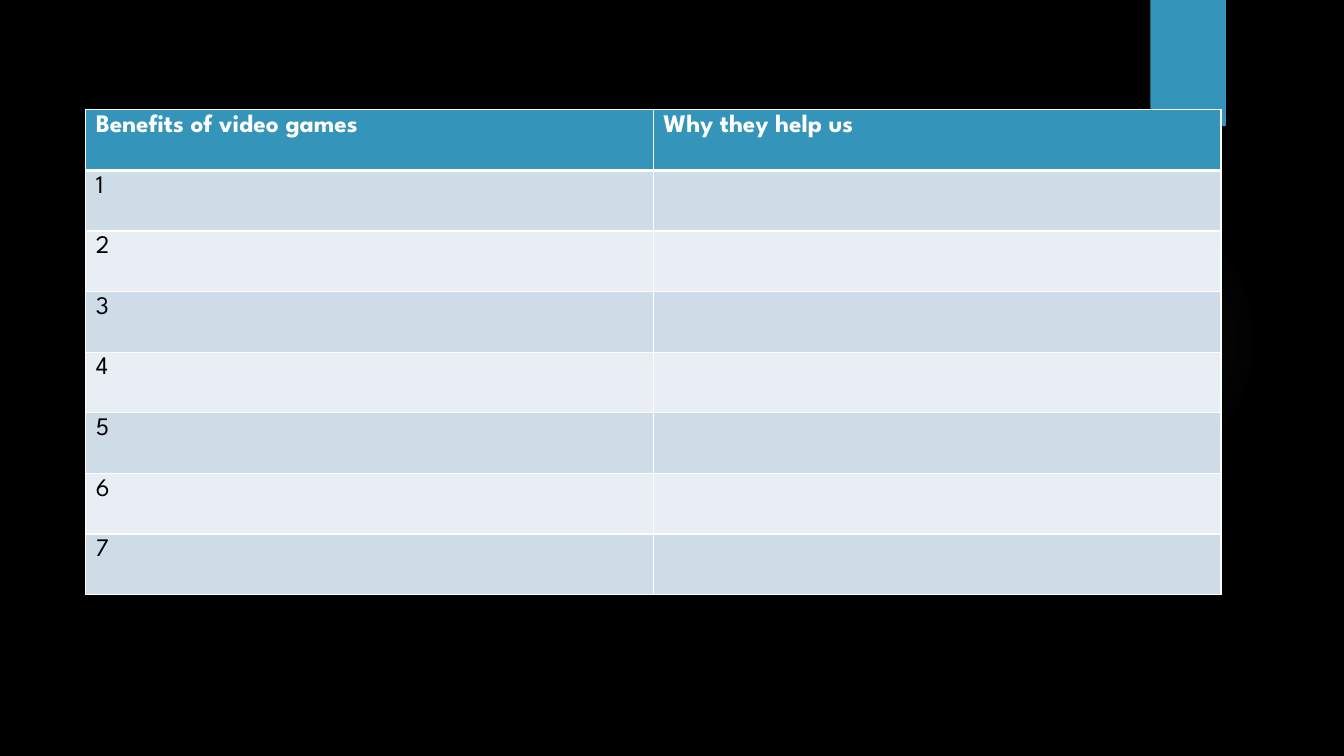
from dataclasses import dataclass

from pptx import Presentation
from pptx.dml.color import RGBColor
from pptx.enum.shapes import MSO_SHAPE
from pptx.oxml import parse_xml
from pptx.oxml.ns import nsdecls, qn
from pptx.util import Inches, Pt

HEADERS = ("Benefits of video games", "Why they help us")
BENEFITS = [(str(number), "") for number in range(1, 8)]
ROWS = [HEADERS, *BENEFITS]

TABLE_LEFT, TABLE_TOP = 0.85, 1.09
COLUMN_WIDTH, TABLE_HEIGHT = 5.63, 4.81
GLOW_STOPS = ((0, 7), (36, 6), (69, 0))


@dataclass(frozen=True)
class Theme:
    background: str = "000000"
    accent: str = "3494BA"
    glow: str = "AAA7BC"
    bands: tuple = ("CEDCE7", "E8EEF3")
    border: str = "FFFFFF"
    header_text: str = "FFFFFF"
    body_text: str = "000000"
    font: str = "League Spartan"
    text_size: int = 18
    border_width: int = 1
    header_rule: int = 3


THEME = Theme()


def paint(fill, color):
    fill.solid()
    fill.fore_color.rgb = RGBColor.from_string(color)


def add_plain_shape(slide, kind, left, top, width, height):
    shape = slide.shapes.add_shape(kind, Inches(left), Inches(top), Inches(width), Inches(height))
    shape.shadow.inherit = False
    shape.line.fill.background()
    return shape


def add_glow(slide):
    glow = add_plain_shape(slide, MSO_SHAPE.OVAL, 9.41, 1.83, 3.08, 3.08)
    glow.fill.background()
    stops = "".join(
        f'<a:gs pos="{position * 1000}"><a:srgbClr val="{THEME.glow}">'
        f'<a:alpha val="{opacity * 1000}"/></a:srgbClr></a:gs>'
        for position, opacity in GLOW_STOPS
    )
    gradient = parse_xml(
        f'<a:gradFill {nsdecls("a")}><a:gsLst>{stops}</a:gsLst><a:path path="circle">'
        '<a:fillToRect l="50000" t="50000" r="50000" b="50000"/></a:path></a:gradFill>'
    )
    properties = glow.element.spPr
    properties.replace(properties.find(qn("a:noFill")), gradient)


def add_tab(slide):
    tab = add_plain_shape(slide, MSO_SHAPE.RECTANGLE, 11.41, 0, 0.75, 1.25)
    paint(tab.fill, THEME.accent)
    effects = tab.element.spPr.find(qn("a:effectLst"))
    effects.append(parse_xml(
        f'<a:outerShdw {nsdecls("a")} blurRad="{Pt(3)}" dist="{Pt(2)}" dir="5400000" rotWithShape="0">'
        '<a:srgbClr val="000000"><a:alpha val="45000"/></a:srgbClr></a:outerShdw>'
    ))


def set_borders(cell, row_index):
    widths = dict.fromkeys("LRTB", THEME.border_width)
    if row_index < 2:
        widths["B" if row_index == 0 else "T"] = THEME.header_rule
    properties = cell._tc.get_or_add_tcPr()
    for position, (side, width) in enumerate(widths.items()):
        properties.insert(position, parse_xml(
            f'<a:ln{side} {nsdecls("a")} w="{Pt(width)}"><a:solidFill>'
            f'<a:srgbClr val="{THEME.border}"/></a:solidFill></a:ln{side}>'
        ))


def format_cell(cell, text, row_index):
    is_header = row_index == 0
    paint(cell.fill, THEME.accent if is_header else THEME.bands[(row_index - 1) % 2])
    set_borders(cell, row_index)
    cell.text_frame.text = text
    font = cell.text_frame.paragraphs[0].font
    font.size = Pt(THEME.text_size)
    for run in cell.text_frame.paragraphs[0].runs:
        run.font.name = THEME.font
        run.font.size = Pt(THEME.text_size)
        run.font.bold = is_header
        run.font.color.rgb = RGBColor.from_string(THEME.header_text if is_header else THEME.body_text)


def add_benefits_table(slide):
    table = slide.shapes.add_table(
        len(ROWS), len(HEADERS), Inches(TABLE_LEFT), Inches(TABLE_TOP),
        Inches(COLUMN_WIDTH * len(HEADERS)), Inches(TABLE_HEIGHT),
    ).table
    for row_index, texts in enumerate(ROWS):
        for column_index, text in enumerate(texts):
            format_cell(table.cell(row_index, column_index), text, row_index)


def main():
    """Build the slide with the table of video game benefits."""
    presentation = Presentation()
    presentation.slide_width, presentation.slide_height = Inches(13.33), Inches(7.5)
    slide = presentation.slides.add_slide(presentation.slide_layouts[6])
    paint(slide.background.fill, THEME.background)
    add_glow(slide)
    add_tab(slide)
    add_benefits_table(slide)
    presentation.save("out.pptx")


if __name__ == "__main__":
    main()
